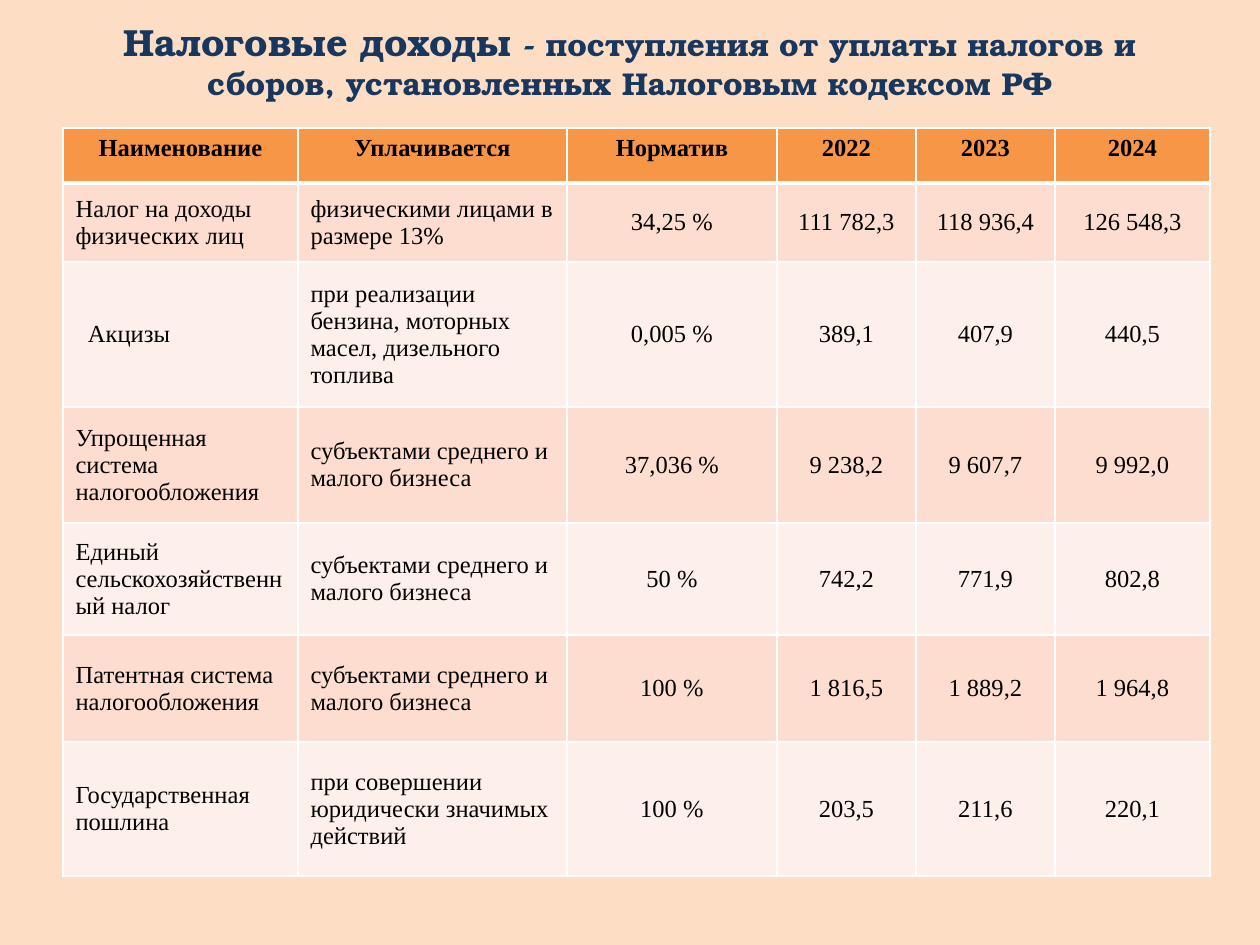
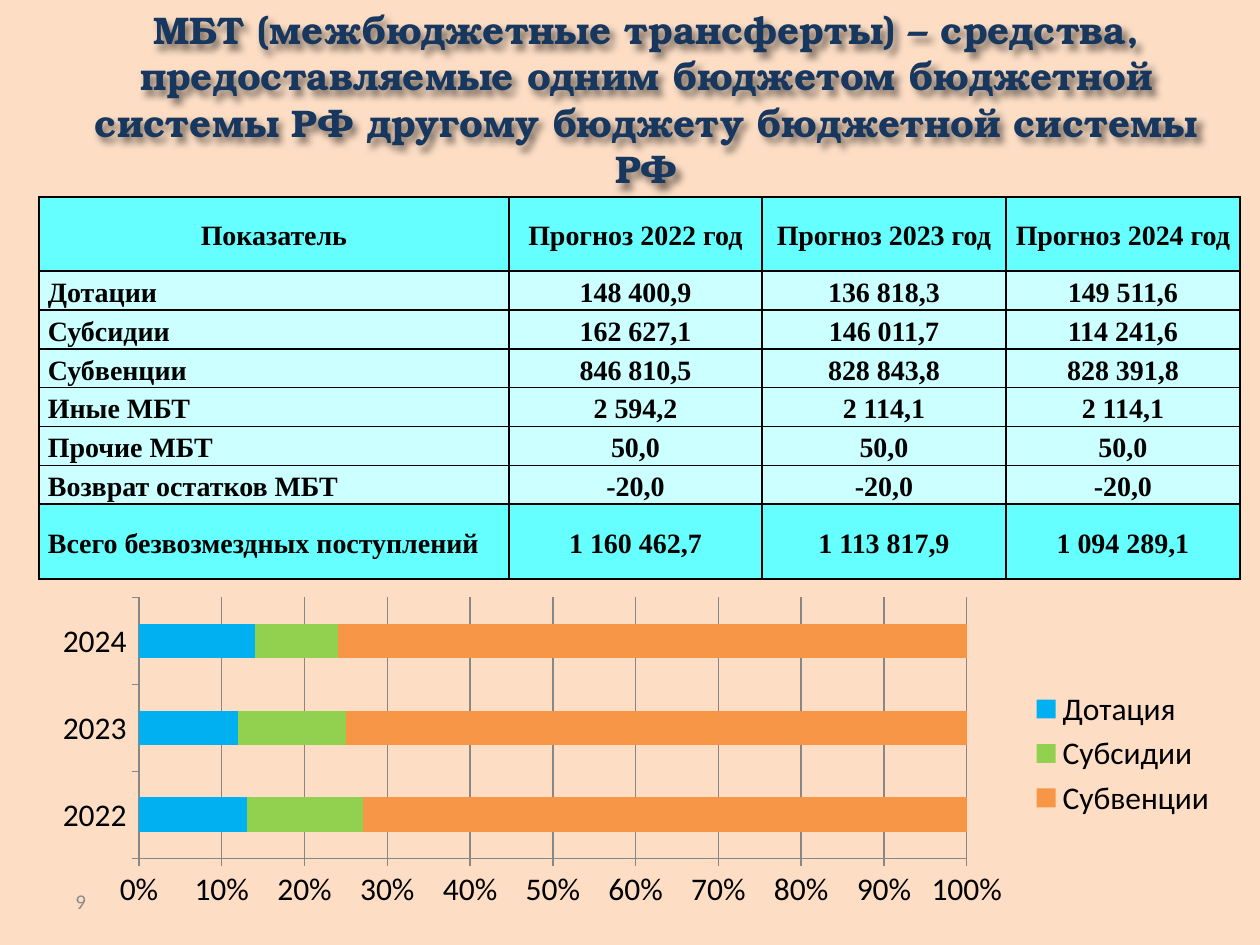
from pptx import Presentation, util as u
from pptx.chart.data import CategoryChartData
from pptx.dml.color import RGBColor
from pptx.enum import chart as ch, text as t
from pptx.oxml import parse_xml
from pptx.oxml.ns import nsdecls, qn

# Content
TAXES = [
    ("Наименование", "Уплачивается", "Норматив", "2022", "2023", "2024"),
    ("Налог на доходы физических лиц", "физическими лицами в размере 13%",
     "34,25 %", "111 782,3", "118 936,4", "126 548,3"),
    ("Акцизы", "при реализации бензина, моторных масел, дизельного топлива",
     "0,005 %", "389,1", "407,9", "440,5"),
    ("Упрощенная система налогообложения", "субъектами среднего и малого бизнеса",
     "37,036 %", "9 238,2", "9 607,7", "9 992,0"),
    ("Единый сельскохозяйственный налог", "субъектами среднего и малого бизнеса",
     "50 %", "742,2", "771,9", "802,8"),
    ("Патентная система налогообложения", "субъектами среднего и малого бизнеса",
     "100 %", "1 816,5", "1 889,2", "1 964,8"),
    ("Государственная пошлина", "при совершении юридически значимых действий",
     "100 %", "203,5", "211,6", "220,1"),
]
GRANTS = [
    ("Показатель", "Прогноз 2022 год", "Прогноз 2023 год", "Прогноз 2024 год"),
    ("Дотации", "148 400,9", "136 818,3", "149 511,6"),
    ("Субсидии", "162 627,1", "146 011,7", "114 241,6"),
    ("Субвенции", "846 810,5", "828 843,8", "828 391,8"),
    ("Иные МБТ", "2 594,2", "2 114,1", "2 114,1"),
    ("Прочие МБТ", "50,0", "50,0", "50,0"),
    ("Возврат остатков МБТ", "-20,0", "-20,0", "-20,0"),
    ("Всего безвозмездных поступлений", "1 160 462,7", "1 113 817,9", "1 094 289,1"),
]
YEARS = ("2022", "2023", "2024")
SHARES = [("Дотация", (13, 12, 14), "00B0F0"),
          ("Субсидии", (14, 13, 10), "92D050"),
          ("Субвенции", (73, 75, 76), "F79646")]
TAX_HEAD = [("Налоговые доходы ", 21.6),
            ("- поступления от уплаты налогов и сборов, "
             "установленных Налоговым кодексом РФ", 18)]
GRANT_HEAD = ("МБТ (межбюджетные трансферты) – средства, предоставляемые одним "
              "бюджетом бюджетной системы РФ другому бюджету бюджетной системы РФ")


class Theme:
    back, navy, black, white, gray = "FDDEC5", "17375E", "000000", "FFFFFF", "8C8C8C"
    orange, rose, blush = "F79646", "FCDDCF", "FDEFE9"
    aqua, ice, grid = "66FFFF", "CCFFFF", "878787"
    serif, head, sans = "Times New Roman", "TeX Gyre Bonum", "Calibri"
    tax, grant, title, chart, page = 14, 16, 22, 18, 12


MID, TOP = t.MSO_ANCHOR.MIDDLE, t.MSO_ANCHOR.TOP
SCALE = 914400 / 126  # EMU in one px


def px(n):
    return u.Emu(round(n * SCALE))


def rgb(code):
    return RGBColor.from_string(code)


def write(frame, runs, size=None, font=Theme.serif, color=Theme.black, bold=False,
          center=False, gap=None):
    """Fill the first paragraph with a string or with (string, size) pairs."""
    frame.word_wrap = True
    para = frame.paragraphs[0]
    para.alignment = t.PP_ALIGN.CENTER if center else t.PP_ALIGN.LEFT
    if gap:
        para.line_spacing = gap
    for words, pts in [(runs, size)] if isinstance(runs, str) else runs:
        run = para.add_run()
        run.text = words
        run.font.size, run.font.name, run.font.bold = u.Pt(pts), font, bold
        run.font.color.rgb = rgb(color)


def label(slide, box, runs, anchor=MID, **style):
    shape = slide.shapes.add_textbox(*map(px, box))
    shape.text_frame.vertical_anchor = anchor
    write(shape.text_frame, runs, **style)
    return shape


def heading(slide, box, runs, **style):
    return label(slide, box, runs, font=Theme.head, color=Theme.navy,
                 bold=True, center=True, **style)


def cast(shape):
    """Soft shadow under the letters of an unfilled box."""
    shape.shadow.inherit = False
    effects = shape._element.spPr.find(qn("a:effectLst"))
    effects.append(parse_xml(
        f'<a:outerShdw {nsdecls("a")} blurRad="50800" dist="38100" dir="3600000">'
        '<a:srgbClr val="000000"><a:alpha val="50000"/></a:srgbClr></a:outerShdw>'))


def edge(cell, color, **widths):
    """Draw the four borders; widths in points override the usual 1."""
    for side in "LRTB":
        wide = u.Pt(widths.get(side, 1))
        cell._tc.get_or_add_tcPr().append(parse_xml(
            f'<a:ln{side} {nsdecls("a")} w="{wide}"><a:solidFill>'
            f'<a:srgbClr val="{color}"/></a:solidFill></a:ln{side}>'))


def grid(slide, left, top, cols, rows, data, dress):
    """Place a table; dress(cell, words, row, col) formats each cell."""
    table = slide.shapes.add_table(len(rows), len(cols), px(left), px(top),
                                   px(sum(cols)), px(sum(rows))).table
    table.first_row = table.horz_banding = False
    for part, sizes in ((table.columns, cols), (table.rows, rows)):
        for item, size in zip(part, sizes):
            if part is table.columns:
                item.width = px(size)
            else:
                item.height = px(size)
    for r, line in enumerate(data):
        for c, words in enumerate(line):
            dress(table.cell(r, c), words, r, c)


def paint(cell, color):
    cell.fill.solid()
    cell.fill.fore_color.rgb = rgb(color)


def dress_tax(cell, words, r, c):
    heavy = {0: {"B": 3}, 1: {"T": 3}}.get(r, {})
    edge(cell, Theme.white, **heavy)
    paint(cell, (Theme.rose if r % 2 else Theme.blush) if r else Theme.orange)
    cell.vertical_anchor = MID if r else TOP
    if words == "Акцизы":
        cell.margin_left = px(25)
    write(cell.text_frame, words, size=Theme.tax, bold=r == 0, center=r == 0 or c > 1)


def dress_grant(cell, words, r, c):
    edge(cell, Theme.black)
    paint(cell, Theme.aqua if r in (0, len(GRANTS) - 1) else Theme.ice)
    cell.vertical_anchor = MID
    cell.margin_left = cell.margin_right = px(9)
    cell.margin_top = cell.margin_bottom = 0
    write(cell.text_frame, words, size=Theme.grant, bold=True,
          center=r == 0 or c > 0, gap=1.15)


def shares(slide, box):
    data = CategoryChartData()
    data.categories = YEARS
    for name, vals, _ in SHARES:
        data.add_series(name, vals)
    chart = slide.shapes.add_chart(ch.XL_CHART_TYPE.BAR_STACKED_100,
                                   *map(px, box), data).chart
    chart.has_title = False
    chart.font.size, chart.font.name = u.Pt(Theme.chart), Theme.sans
    chart.font.color.rgb = rgb(Theme.black)
    chart.has_legend = True
    chart.legend.position = ch.XL_LEGEND_POSITION.RIGHT
    chart.legend.include_in_layout = False

    # Bars
    plot = chart.plots[0]
    plot.gap_width, plot.overlap, plot.vary_by_categories = 150, 100, False
    for series, (_, _, color) in zip(plot.series, SHARES):
        series.format.fill.solid()
        series.format.fill.fore_color.rgb = rgb(color)

    # Axes
    value = chart.value_axis
    value.has_major_gridlines = True
    value.minimum_scale, value.maximum_scale, value.major_unit = 0, 1, 0.1
    value.tick_labels.number_format = "0%"
    value.tick_labels.number_format_is_linked = False
    for axis in (value, chart.category_axis):
        axis.major_tick_mark = ch.XL_TICK_MARK.OUTSIDE
        axis.format.line.color.rgb = rgb(Theme.grid)
    value.major_gridlines.format.line.color.rgb = rgb(Theme.grid)

    # Fixed plot area
    area = chart._chartSpace.chart.plotArea
    for old in area.findall(qn("c:layout")):
        area.remove(old)
    spots = "".join(f'<c:{k} val="{v}"/>' for k, v in (
        ("layoutTarget", "inner"), ("xMode", "edge"), ("yMode", "edge"),
        ("x", 0.084), ("y", 0.02), ("w", 0.695), ("h", 0.803)))
    area.insert(0, parse_xml(f'<c:layout {nsdecls("c")}><c:manualLayout>{spots}'
                             '</c:manualLayout></c:layout>'))


def page(deck):
    slide = deck.slides.add_slide(deck.slide_layouts[6])
    slide.background.fill.solid()
    slide.background.fill.fore_color.rgb = rgb(Theme.back)
    return slide


def main():
    deck = Presentation()
    deck.slide_width, deck.slide_height = px(1260), px(945)

    # Tax income
    slide = page(deck)
    heading(slide, (63, 20, 1134, 81), TAX_HEAD)
    grid(slide, 63, 128, (235, 269, 210, 139, 139, 155),
         (55, 79, 145, 116, 112, 107, 134), TAXES, dress_tax)

    # Transfers between budgets
    slide = page(deck)
    label(slide, (63, 876, 294, 50), "9", size=Theme.page, font=Theme.sans,
          color=Theme.gray)
    cast(heading(slide, (77, 0, 1139, 199), GRANT_HEAD, size=Theme.title, anchor=TOP))
    grid(slide, 39, 197, (470, 253, 244, 234),
         [74] + [39, 39, 38] * 2 + [75], GRANTS, dress_grant)
    shares(slide, (39, 591, 1191, 325))

    deck.save("out.pptx")


if __name__ == "__main__":
    main()
